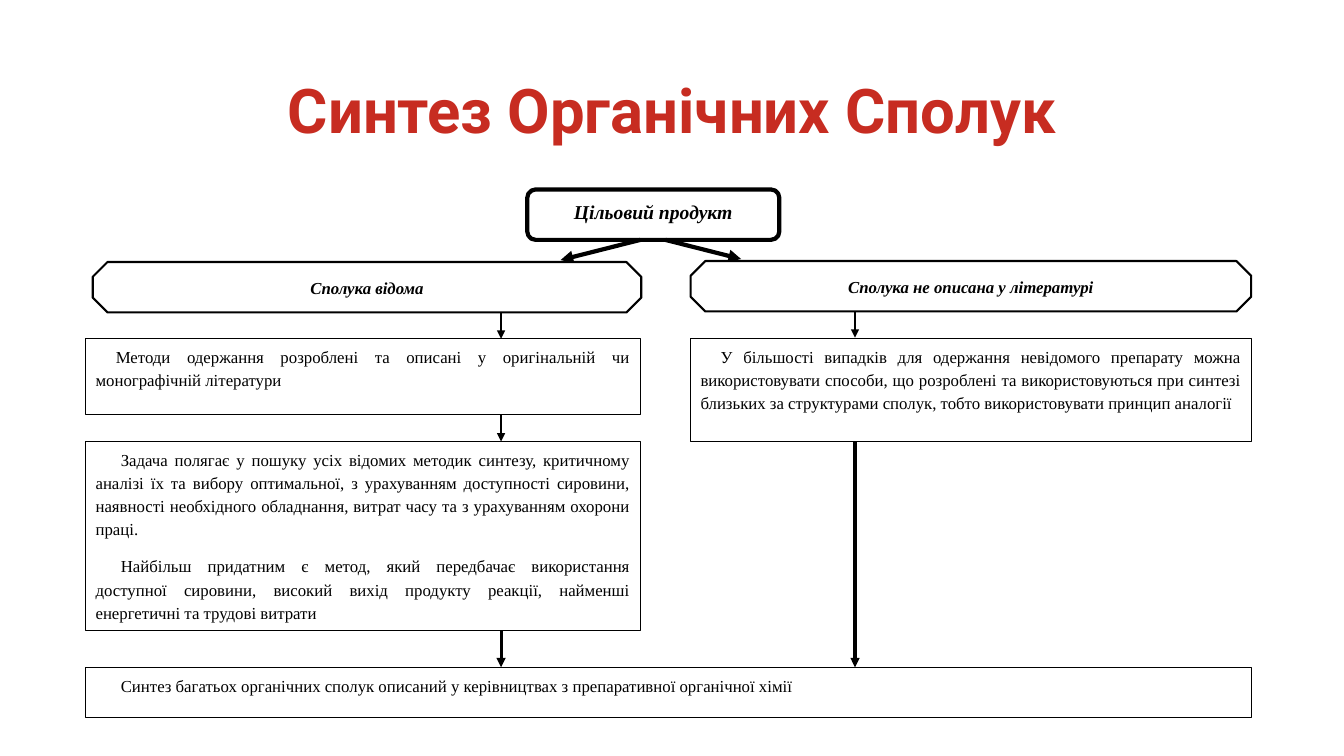
from lxml import etree
from pptx import Presentation
from pptx import util as u
from pptx.dml.color import RGBColor
from pptx.enum import shapes as s
from pptx.enum import text as t
from pptx.oxml.ns import qn

RED = RGBColor(0xC7, 0x2C, 0x21)
BLACK = RGBColor(0, 0, 0)
WHITE = RGBColor(255, 255, 255)
SERIF = "Times New Roman"
KIND = s.MSO_SHAPE
ALIGN = t.PP_ALIGN


def add_title(slide, box, words):
    title = slide.shapes.title
    title.left, title.top, title.width, title.height = map(u.Inches, box)
    frame = title.text_frame
    frame.text = words
    frame.word_wrap = True
    frame.vertical_anchor = t.MSO_ANCHOR.MIDDLE
    para = frame.paragraphs[0]
    para.alignment = ALIGN.CENTER
    para.line_spacing = 0.9
    font = para.runs[0].font
    font.name, font.size, font.bold = "Roboto", u.Pt(44), True
    font.color.rgb = RED


def add_node(slide, box, kind, line, lines, size=12, indent=None):
    """Draw a bordered box: a centred heading, or justified text if indented."""
    node = slide.shapes.add_shape(kind, *map(u.Inches, box))
    node.shadow.inherit = False
    node.fill.solid()
    node.fill.fore_color.rgb = WHITE
    node.line.color.rgb = BLACK
    node.line.width = u.Pt(line)
    frame = node.text_frame
    frame.word_wrap = True
    frame.vertical_anchor = t.MSO_ANCHOR.TOP
    frame.text = "\n".join(lines)
    for para in frame.paragraphs:
        para.line_spacing = 1.15
        para.space_after = u.Pt(10)
        para.alignment = ALIGN.JUSTIFY if indent else ALIGN.CENTER
        if indent:
            props = para._p.get_or_add_pPr()
            props.set("marL", "0")
            props.set("indent", str(u.Inches(indent)))
        font = para.runs[0].font
        font.name, font.size = SERIF, u.Pt(size)
        font.bold = font.italic = not indent
        font.color.rgb = BLACK


def add_arrow(slide, start, end, width):
    arrow = slide.shapes.add_connector(
        s.MSO_CONNECTOR.STRAIGHT, *map(u.Inches, (*start, *end)))
    arrow.line.color.rgb = BLACK
    arrow.line.width = u.Pt(width)
    tail = etree.SubElement(arrow.line._get_or_add_ln(), qn("a:tailEnd"))
    tail.set("type", "triangle")
    etree.SubElement(arrow._element.spPr, qn("a:effectLst"))


def add_goal(slide, box):
    """Place the goal box and the two arrows that fork from it."""
    x, y, w, h = box
    add_node(slide, box, KIND.ROUNDED_RECTANGLE, 3, ["Цільовий продукт"], 14)
    base = y + h
    add_arrow(slide, (x + 1.12, base), (x + 0.33, base + 0.2), 3)
    add_arrow(slide, (x + 1.37, base), (x + 2.12, base + 0.19), 3)


def add_known(slide, box):
    x, y, w, h = box
    mid = x + 4.12
    add_node(slide, (x + 0.07, y, w - 0.06, 0.5), KIND.OCTAGON, 1.5,
             ["Сполука відома"])
    add_arrow(slide, (mid, y + 0.5), (mid, y + 0.76), 1.5)
    add_node(slide, (x, y + 0.76, w, 0.75), KIND.RECTANGLE, 0.75,
             ["Методи одержання розроблені та описані у оригінальній чи "
              "монографічній літератури"], indent=0.2)
    add_arrow(slide, (mid, y + 1.52), (mid, y + 1.78), 1.5)
    add_node(slide, (x, y + 1.78, w, 1.88), KIND.RECTANGLE, 0.75,
             ["Задача полягає у пошуку усіх відомих методик синтезу, "
              "критичному аналізі їх та вибору оптимальної, з урахуванням "
              "доступності сировини, наявності необхідного обладнання, "
              "витрат часу та з урахуванням охорони праці.",
              "Найбільш придатним є метод, який передбачає використання "
              "доступної сировини, високий вихід продукту реакції, найменші "
              "енергетичні та трудові витрати"], indent=0.25)
    add_arrow(slide, (mid, y + 3.66), (mid, y + h), 2.25)


def add_novel(slide, box):
    x, y, w, h = box
    mid = x + 1.63
    add_node(slide, (x, y, w, 0.5), KIND.OCTAGON, 1.5,
             ["Сполука не описана у літературі"])
    add_arrow(slide, (mid, y + 0.5), (mid, y + 0.76), 1.5)
    add_node(slide, (x, y + 0.77, w, 1.02), KIND.RECTANGLE, 0.75,
             ["У більшості випадків для одержання невідомого препарату можна "
              "використовувати способи, що розроблені та використовуються "
              "при синтезі близьких за структурами сполук, тобто "
              "використовувати принцип аналогії"], indent=0.2)
    add_arrow(slide, (mid, y + 1.79), (mid, y + h), 2.25)


def main():
    deck = Presentation()
    deck.slide_width, deck.slide_height = u.Inches(13.33), u.Inches(7.5)
    slide = deck.slides.add_slide(deck.slide_layouts[5])
    add_title(slide, (0.92, 0.4, 11.5, 1.45), "Синтез Органічних Сполук")
    add_goal(slide, (5.23, 1.88, 2.5, 0.5))
    add_known(slide, (0.85, 2.6, 5.5, 4.02))
    add_novel(slide, (6.85, 2.59, 5.56, 4.03))
    add_node(slide, (0.85, 6.62, 11.56, 0.5), KIND.RECTANGLE, 0.75,
             ["Синтез багатьох органічних сполук описаний у керівництвах з "
              "препаративної органічної хімії"], indent=0.25)
    deck.save("out.pptx")


if __name__ == "__main__":
    main()
